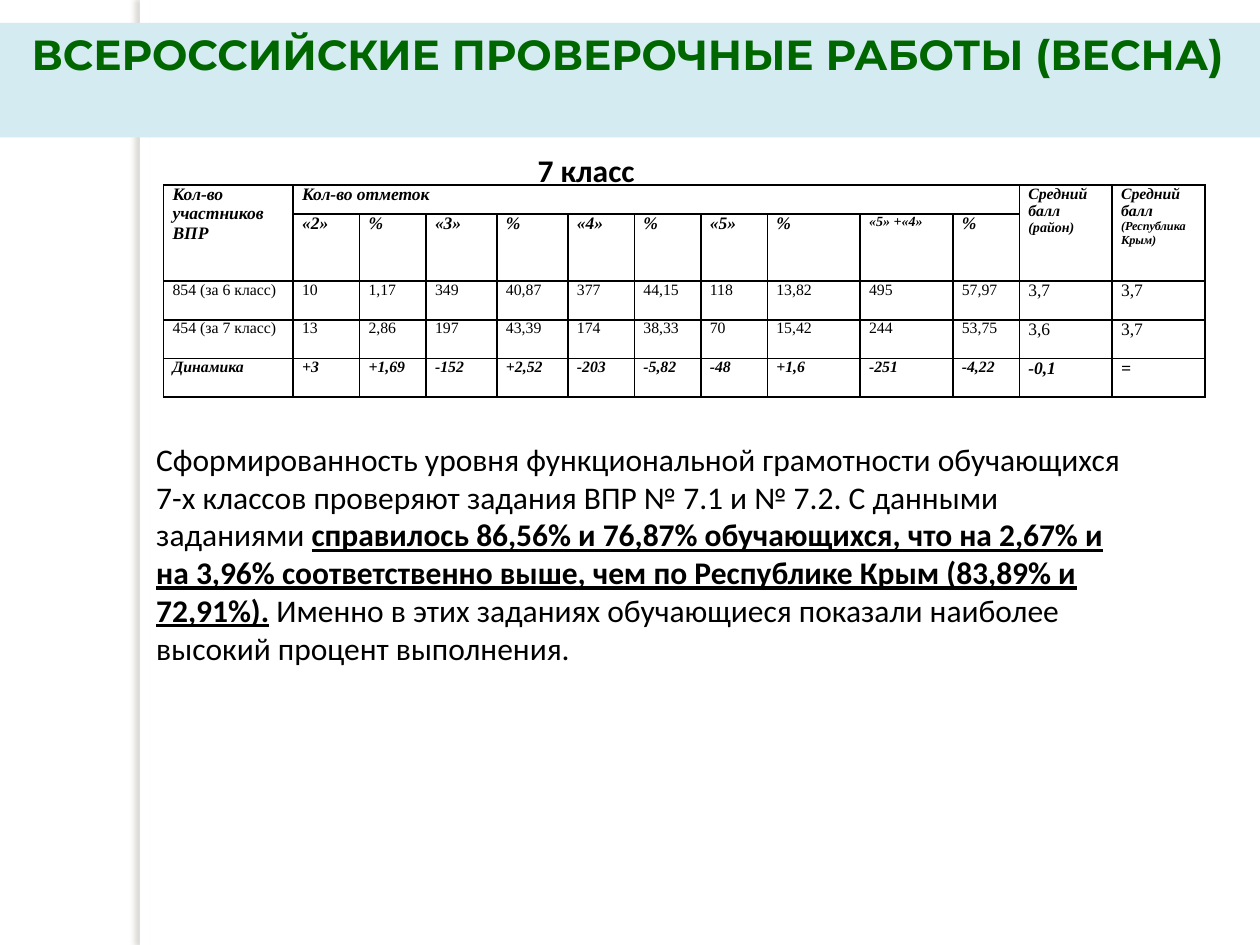
from lxml.etree import SubElement
from pptx import Presentation
from pptx.dml.color import RGBColor
from pptx.enum.shapes import MSO_SHAPE
from pptx.enum.text import MSO_ANCHOR, PP_ALIGN
from pptx.oxml.ns import qn
from pptx.util import Cm, Pt

BLACK, WHITE, GREEN, SKY = "000000", "FFFFFF", "006600", "D4EBF1"
PLAIN = {"name": "Calibri", "size": Pt(18), "bold": False}
STRONG = {**PLAIN, "bold": True}
LINK = {**STRONG, "underline": True}
HEAD = {"name": "Montserrat", "size": Pt(24), "bold": True}

WIDTHS = [2.61] + [1.34] * 2 + [1.43] * 2 + [1.34] * 3 + [1.87] * 2 + [1.34] + [1.87] * 2
HEIGHTS = [0.58, 1.35, 0.78, 0.78, 0.78]
ROWS = [
    ["Кол-во участников ВПР", "Кол-во отметок"] + [""] * 9 + ["", ""],
    ["", "«2»", "%", "«3»", "%", "«4»", "%", "«5»", "%", "«5» +«4»", "%", "", ""],
    ["854 (за 6 класс)", "10", "1,17", "349", "40,87", "377", "44,15", "118",
     "13,82", "495", "57,97", "3,7", "3,7"],
    ["454 (за 7 класс)", "13", "2,86", "197", "43,39", "174", "38,33", "70",
     "15,42", "244", "53,75", "3,6", "3,7"],
    ["Динамика", "+3", "+1,69", "-152", "+2,52", "-203", "-5,82", "-48",
     "+1,6", "-251", "-4,22", "-0,1", "="],
]
# Mean score headings: paragraphs of (text, size) runs
MEANS = {
    11: [[("Средний балл", 9)], [("(район)", 8)]],
    12: [[("Средний балл ", 9), ("(Республика Крым)", 7)]],
}
BODY = [
    ("Сформированность уровня функциональной грамотности обучающихся 7-х классов "
     "проверяют задания ВПР № 7.1 и № 7.2. С данными заданиями ", PLAIN),
    ("справилось 86,56% и 76,87% обучающихся, что на 2,67% и на 3,96% соответственно "
     "выше, чем по Республике Крым (83,89% и 72,91%).", LINK),
    (" Именно в этих заданиях обучающиеся показали наиболее высокий процент "
     "выполнения.", PLAIN),
]


def paint(hue):
    return RGBColor.from_string(hue)


def write(para, text, form, hue=BLACK):
    run = para.add_run()
    run.text = text
    for key, value in form.items():
        setattr(run.font, key, value)
    run.font.color.rgb = paint(hue)


def block(slide, box, hue):
    shape = slide.shapes.add_shape(MSO_SHAPE.RECTANGLE, *map(Cm, box))
    shape.shadow.inherit = False
    shape.fill.solid()
    shape.fill.fore_color.rgb = paint(hue)
    shape.line.fill.background()
    return shape


def strip(slide, box):
    # White strip with a soft shadow on its left
    shape = block(slide, box, WHITE)
    list_ = shape.element.spPr.find(qn("a:effectLst"))
    shade = SubElement(list_, qn("a:outerShdw"), blurRad=str(Pt(3)), dist=str(Pt(3)),
                       dir="10800000", algn="ctr", rotWithShape="0")
    tint = SubElement(shade, qn("a:srgbClr"), val="736F63")
    SubElement(tint, qn("a:alpha"), val="25000")


def banner(slide, box, text):
    frame = block(slide, box, SKY).text_frame
    frame.word_wrap = True
    frame.vertical_anchor = MSO_ANCHOR.TOP
    para = frame.paragraphs[0]
    para.alignment = PP_ALIGN.CENTER
    write(para, text, HEAD, GREEN)


def prose(slide, box, runs, align):
    frame = slide.shapes.add_textbox(*map(Cm, box)).text_frame
    frame.word_wrap = True
    para = frame.paragraphs[0]
    para.alignment = align
    for text, form in runs:
        write(para, text, form)


def edge(cell):
    props = cell._tc.get_or_add_tcPr()
    for side in ("lnL", "lnR", "lnT", "lnB"):
        line = SubElement(props, qn(f"a:{side}"), w=str(Pt(1)))
        fill = SubElement(line, qn("a:solidFill"))
        SubElement(fill, qn("a:srgbClr"), val=BLACK)


def content(row, col):
    if row == 0 and col in MEANS:
        return MEANS[col]
    if row < 2:
        size = 8 if col == 9 and row == 1 else 10
    else:
        size = 10 if col > 10 else 9
    return [[(ROWS[row][col], size)]]


def fill_cell(cell, row, col):
    form = {"margin_left": Cm(0.18), "margin_right": Cm(0.18),
            "margin_top": 0, "margin_bottom": 0}
    for key, value in form.items():
        setattr(cell, key, value)
    edge(cell)
    cell.fill.background()
    slant = row not in (2, 3)
    frame = cell.text_frame
    for i, runs in enumerate(content(row, col)):
        para = frame.add_paragraph() if i else frame.paragraphs[0]
        para.alignment = PP_ALIGN.JUSTIFY
        for text, size in runs:
            write(para, text, {"name": "Times New Roman", "size": Pt(size),
                               "bold": slant, "italic": slant})


def marks(slide, left, top):
    size = (sum(WIDTHS), sum(HEIGHTS))
    grid = slide.shapes.add_table(len(HEIGHTS), len(WIDTHS), Cm(left), Cm(top),
                                  *map(Cm, size)).table
    grid.first_row = grid.horz_banding = False
    for col, width in zip(grid.columns, WIDTHS):
        col.width = Cm(width)
    for row, height in zip(grid.rows, HEIGHTS):
        row.height = Cm(height)
    for row in range(len(HEIGHTS)):
        for col in range(len(WIDTHS)):
            fill_cell(grid.cell(row, col), row, col)
    # Heading spans
    for col in (0, 11, 12):
        grid.cell(0, col).merge(grid.cell(1, col))
    grid.cell(0, 1).merge(grid.cell(0, 10))


def main():
    deck = Presentation()
    deck.slide_width, deck.slide_height = Cm(25.4), Cm(19.05)
    slide = deck.slides.add_slide(deck.slide_layouts[6])
    strip(slide, (2.82, 0, 0.2, 19.05))
    prose(slide, (8.31, 2.92, 7.01, 1.02), [("7 класс", STRONG)], PP_ALIGN.CENTER)
    banner(slide, (-0.1, 0.46, 25.5, 2.31), "ВСЕРОССИЙСКИЕ ПРОВЕРОЧНЫЕ РАБОТЫ (ВЕСНА)")
    marks(slide, 3.3, 3.73)
    prose(slide, (2.9, 8.74, 20.19, 5.64), BODY, PP_ALIGN.LEFT)
    deck.save("out.pptx")


if __name__ == "__main__":
    main()
